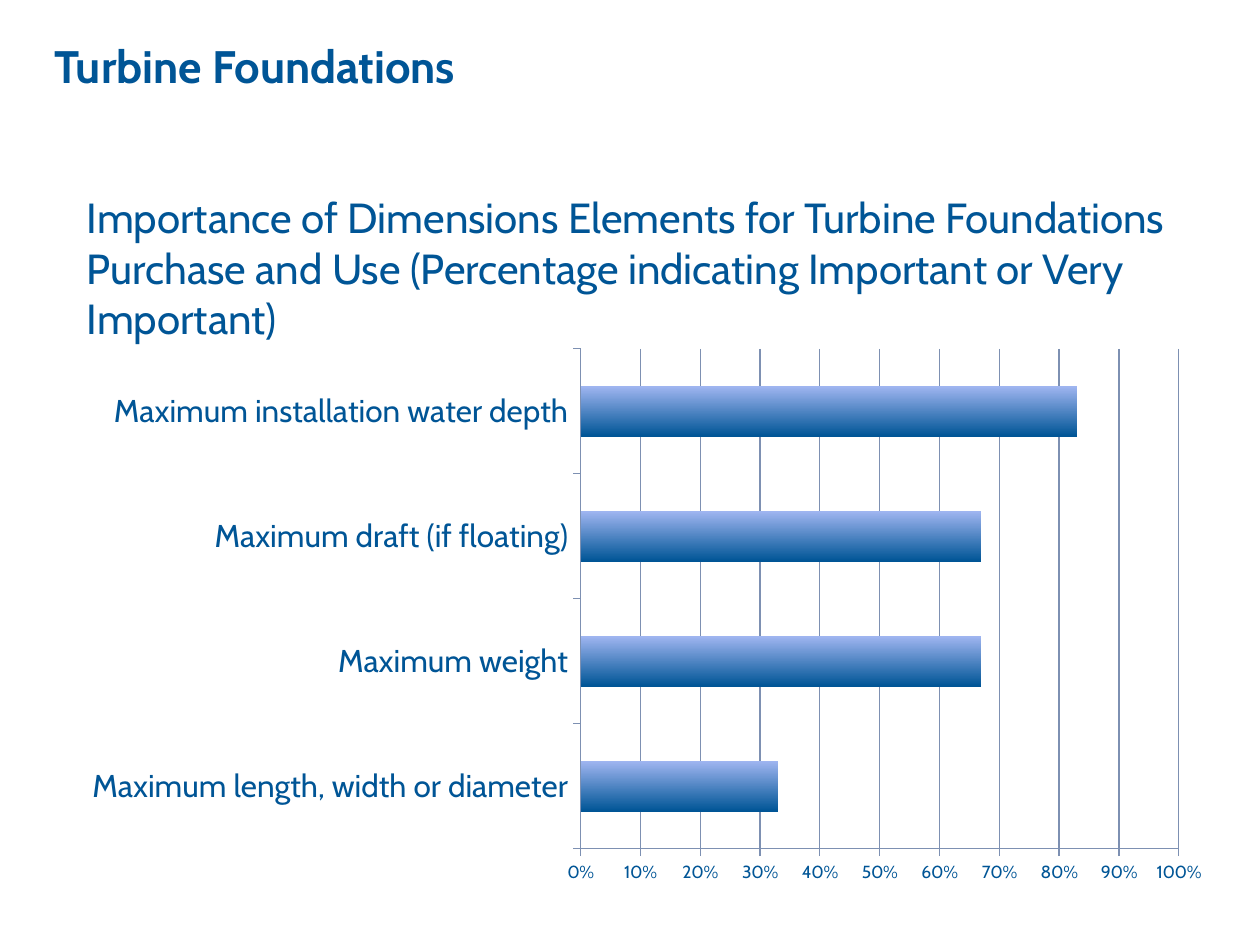
"""Build a slide with a bar chart on turbine foundation dimensions."""
from dataclasses import dataclass

from lxml import etree
from pptx import Presentation
from pptx.chart.data import CategoryChartData
from pptx.dml.color import RGBColor
from pptx.enum.chart import XL_CHART_TYPE, XL_TICK_MARK
from pptx.oxml.ns import qn
from pptx.util import Pt

BAR = XL_CHART_TYPE.BAR_CLUSTERED
OUT = XL_TICK_MARK.OUTSIDE
NONE = XL_TICK_MARK.NONE


@dataclass(frozen=True)
class Theme:
    font: str = "Cabin"
    ink: RGBColor = RGBColor(0x00, 0x55, 0x96)
    light: RGBColor = RGBColor(0x9F, 0xB5, 0xF0)
    rule: RGBColor = RGBColor(0x7D, 0x90, 0xB2)
    title: int = 26
    head: int = 24
    label: int = 18
    tick: int = 10


THEME = Theme()
TITLE = "Turbine Foundations"
HEAD = ("Importance of Dimensions Elements for Turbine Foundations Purchase "
        "and Use (Percentage indicating Important or Very Important)")
DATA = {
    "Maximum length, width or diameter": 0.33,
    "Maximum weight": 0.67,
    "Maximum draft (if floating)": 0.67,
    "Maximum installation water depth": 0.83,
}


def set_font(font, size, bold=False):
    font.name = THEME.font
    font.size = Pt(size)
    font.bold = bold
    font.color.rgb = THEME.ink


def add_text(slide, box, text, size, bold=False):
    frame = slide.shapes.add_textbox(*map(Pt, box)).text_frame
    frame.word_wrap = True
    para = frame.paragraphs[0]
    para.text = text
    set_font(para.font, size, bold)


def set_line(line):
    line.color.rgb = THEME.rule
    line.width = Pt(0.75)


def set_axis(axis, size):
    axis.major_tick_mark = OUT
    axis.minor_tick_mark = NONE
    set_line(axis.format.line)
    set_font(axis.tick_labels.font, size)


def set_plot(chart, **area):
    plot = chart.plots[0]
    plot.gap_width = 150
    plot.vary_by_categories = False
    fill = plot.series[0].format.fill
    fill.gradient()
    fill.gradient_angle = 270
    for stop, color in zip(fill.gradient_stops, (THEME.light, THEME.ink)):
        stop.color.rgb = color
    host = chart.element.find(".//" + qn("c:plotArea"))
    for old in host.findall(qn("c:layout")):
        host.remove(old)
    layout = etree.Element(qn("c:layout"))
    host.insert(0, layout)
    manual = etree.SubElement(layout, qn("c:manualLayout"))
    rules = {"layoutTarget": "inner", "xMode": "edge", "yMode": "edge", **area}
    for name, val in rules.items():
        etree.SubElement(manual, qn("c:" + name)).set("val", str(val))


def add_bars(slide, box):
    data = CategoryChartData(number_format="0%")
    data.categories = list(DATA)
    data.add_series("Series 1", list(DATA.values()))
    chart = slide.shapes.add_chart(BAR, *map(Pt, box), data).chart
    chart.has_legend = False
    chart.has_title = False
    set_font(chart.font, THEME.tick)
    set_axis(chart.category_axis, THEME.label)
    axis = chart.value_axis
    set_axis(axis, THEME.tick)
    axis.minimum_scale, axis.maximum_scale = 0, 1
    axis.major_unit = 0.1
    axis.has_major_gridlines = True
    set_line(axis.major_gridlines.format.line)
    axis.tick_labels.number_format = "0%"
    axis.tick_labels.number_format_is_linked = False
    set_plot(chart, x=0.44, y=0.02, w=0.52, h=0.9)


def main():
    deck = Presentation()
    deck.slide_width, deck.slide_height = Pt(720), Pt(540)
    slide = deck.slides.add_slide(deck.slide_layouts[6])
    add_text(slide, (24, 18, 630, 47), TITLE, THEME.title, True)
    add_bars(slide, (42.5, 193, 657.5, 317.5))
    add_text(slide, (42.5, 106, 657.5, 94.5), HEAD, THEME.head)
    deck.save("out.pptx")


if __name__ == "__main__":
    main()
